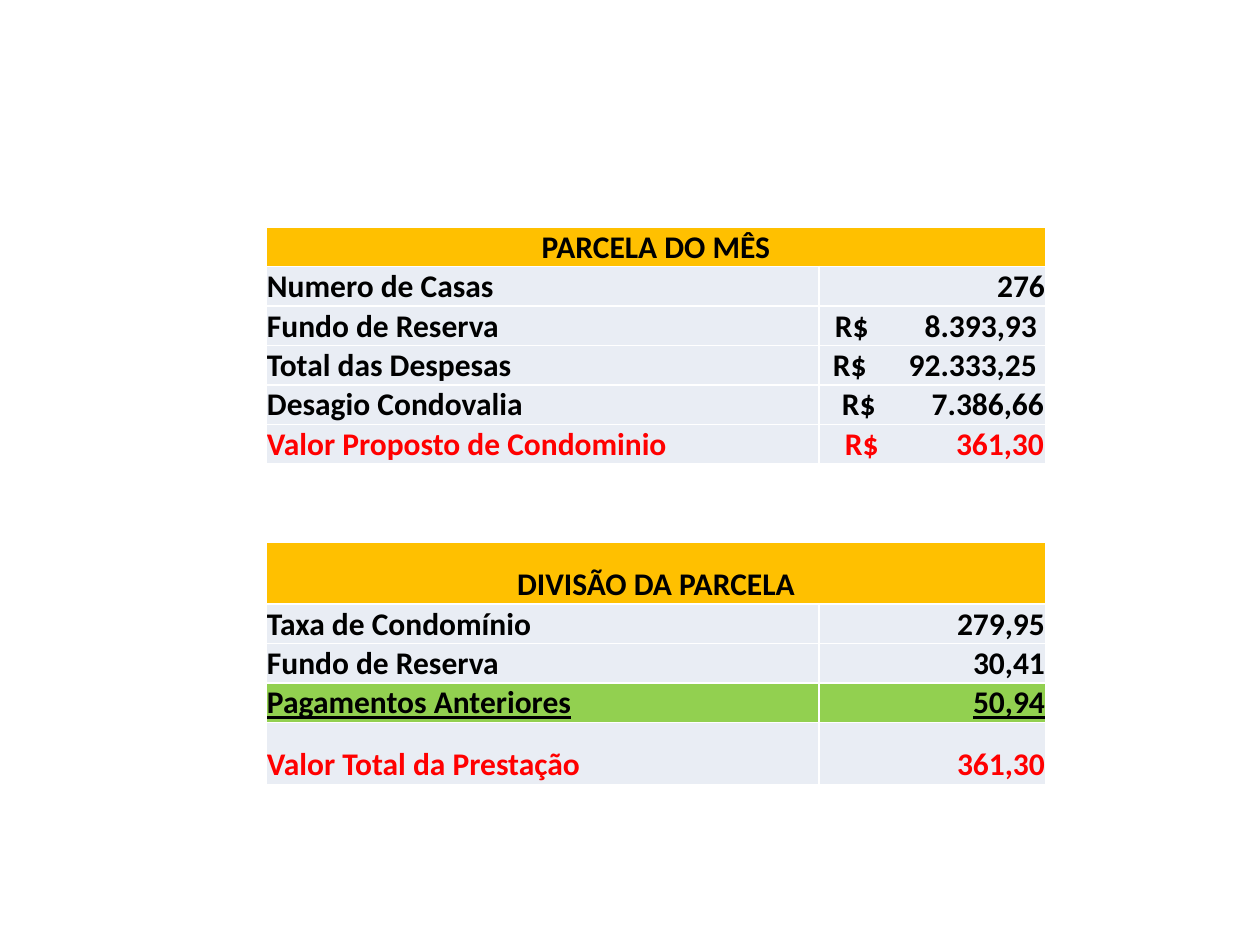
from lxml import etree
from pptx import Presentation
from pptx import util as u
from pptx.dml.color import RGBColor
from pptx.enum import text
from pptx.oxml import ns

PX_PER_INCH = 126
BLACK = RGBColor(0x00, 0x00, 0x00)
RED = RGBColor(0xFF, 0x00, 0x00)
AMBER = RGBColor(0xFF, 0xC0, 0x00)
GREEN = RGBColor(0x92, 0xD0, 0x50)
PALE = RGBColor(0xE9, 0xED, 0xF4)

LEFT = 266
COLUMNS = (553, 227)
ROW, TALL_ROW = 39, 62

# Label, value, and where the currency sign starts and the amount ends
MONTH_ROWS = [
    ("Numero de Casas", "276", None),
    ("Fundo de Reserva", "\tR$\t8.393,93", (15, 217)),
    ("Total das Despesas", "\tR$\t92.333,25", (13, 217)),
    ("Desagio Condovalia", "\tR$\t7.386,66", (22, 224)),
    ("Valor Proposto de Condominio", "\tR$\t361,30", (25, 224)),
]
SPLIT_ROWS = [
    ("Taxa de Condomínio", "279,95", None),
    ("Fundo de Reserva", "30,41", None),
    ("Pagamentos Anteriores", "50,94", None),
    ("Valor Total da Prestação", "361,30", None),
]


def px(length):
    return u.Emu(round(length * 914400 / PX_PER_INCH))


def add_borders(cell):
    properties = cell._tc.get_or_add_tcPr()
    for side in ("lnL", "lnR", "lnT", "lnB"):
        line = etree.SubElement(properties, ns.qn(f"a:{side}"), w=str(u.Pt(1)))
        fill = etree.SubElement(line, ns.qn("a:solidFill"))
        etree.SubElement(fill, ns.qn("a:srgbClr"), val="FFFFFF")


def add_tab_stops(paragraph, start, end):
    tabs = etree.SubElement(paragraph._p.get_or_add_pPr(), ns.qn("a:tabLst"))
    for position, alignment in ((start, "l"), (end, "r")):
        etree.SubElement(tabs, ns.qn("a:tab"), pos=str(px(position)), algn=alignment)


def fill_cell(cell, words, alignment, fill=PALE, color=BLACK, underline=False,
              anchor=text.MSO_ANCHOR.BOTTOM):
    cell.margin_left = cell.margin_right = cell.margin_top = px(1)
    cell.margin_bottom = 0
    cell.vertical_anchor = anchor
    add_borders(cell)
    cell.fill.solid()
    cell.fill.fore_color.rgb = fill
    paragraph = cell.text_frame.paragraphs[0]
    paragraph.text = words
    paragraph.alignment = alignment
    for run in paragraph.runs:
        run.font.name = "Calibri"
        run.font.size = u.Pt(18)
        run.font.bold = True
        run.font.underline = underline
        run.font.color.rgb = color
    return paragraph


def add_cost_table(slide, left, top, title, rows, heights, title_anchor, marked=None):
    """Title row over label and value rows; the last row is red, the marked one green."""
    table = slide.shapes.add_table(
        len(heights), len(COLUMNS), px(left), px(top), px(sum(COLUMNS)), px(sum(heights))
    ).table
    table.first_row = table.horz_banding = False
    for column, width in zip(table.columns, COLUMNS):
        column.width = px(width)
    for row, height in zip(table.rows, heights):
        row.height = px(height)

    table.cell(0, 0).merge(table.cell(0, 1))
    fill_cell(table.cell(0, 0), title, text.PP_ALIGN.CENTER, AMBER, anchor=title_anchor)

    for index, (label, value, stops) in enumerate(rows, start=1):
        style = {
            "fill": GREEN if label == marked else PALE,
            "color": RED if index == len(rows) else BLACK,
            "underline": label == marked,
        }
        fill_cell(table.cell(index, 0), label, text.PP_ALIGN.LEFT, **style)
        alignment = text.PP_ALIGN.LEFT if stops else text.PP_ALIGN.RIGHT
        paragraph = fill_cell(table.cell(index, 1), value, alignment, **style)
        if stops:
            add_tab_stops(paragraph, *stops)


def main():
    presentation = Presentation()
    presentation.slide_width = u.Inches(10)
    presentation.slide_height = u.Inches(7.5)
    slide = presentation.slides.add_slide(presentation.slide_layouts[6])
    add_cost_table(slide, LEFT, 227, "PARCELA DO MÊS", MONTH_ROWS,
                   [ROW] * 6, text.MSO_ANCHOR.MIDDLE)
    add_cost_table(slide, LEFT, 542, "DIVISÃO DA PARCELA", SPLIT_ROWS,
                   [TALL_ROW, ROW, ROW, ROW, TALL_ROW], text.MSO_ANCHOR.BOTTOM,
                   marked="Pagamentos Anteriores")
    presentation.save("out.pptx")


if __name__ == "__main__":
    main()
